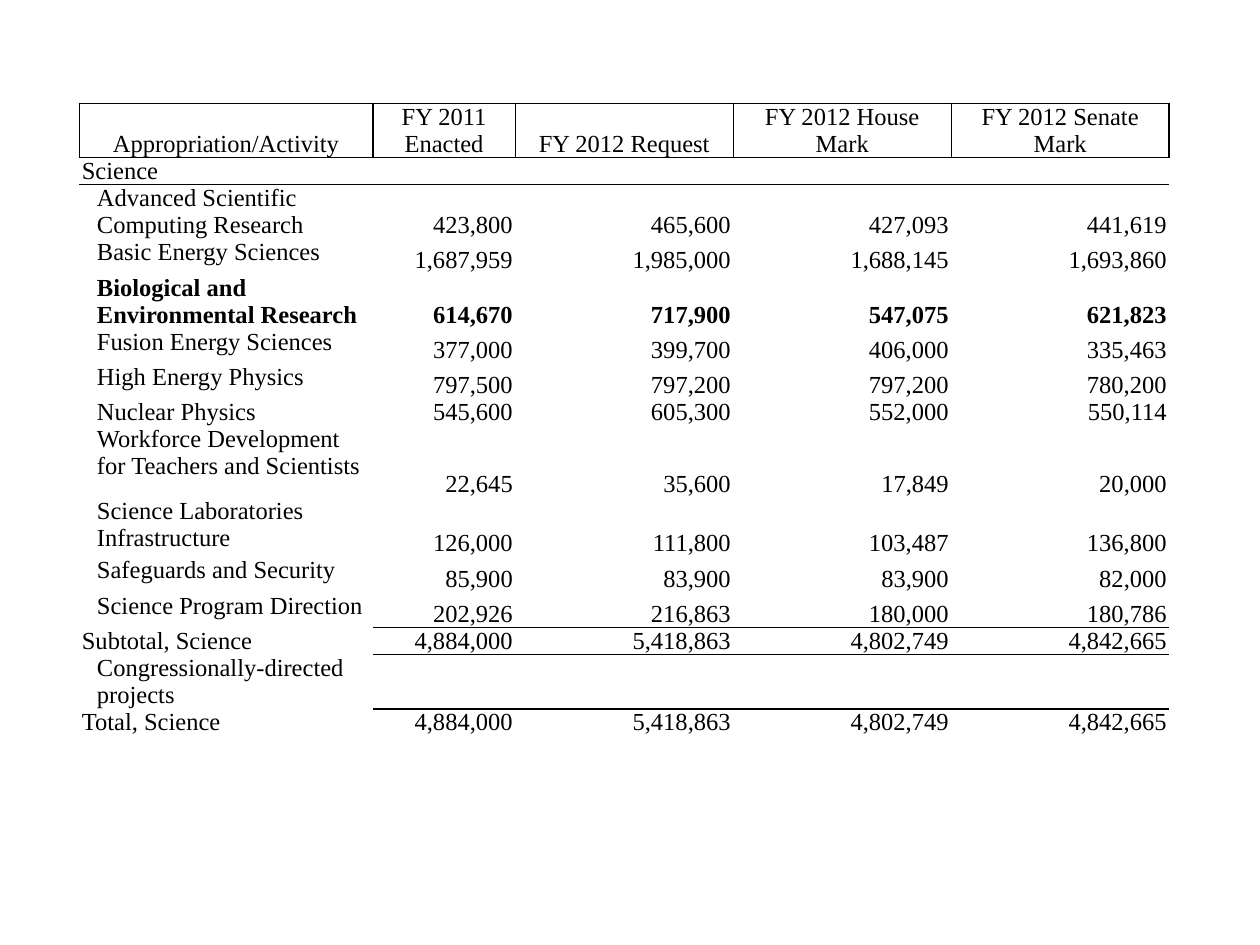
from lxml import etree
from pptx import Presentation
from pptx.dml.color import RGBColor
from pptx.enum.text import MSO_ANCHOR, PP_ALIGN
from pptx.oxml.ns import qn
from pptx.util import Inches, Pt

LEFT, CENTER, RIGHT = PP_ALIGN.LEFT, PP_ALIGN.CENTER, PP_ALIGN.RIGHT
TOP, BOTTOM = MSO_ANCHOR.TOP, MSO_ANCHOR.BOTTOM
NO_STYLE = "{2D5ABB26-0587-4C30-8999-92F81FD0307C}"

COLUMNS = [2.33, 1.13, 1.73, 1.73, 1.73]
HEADER = ["Appropriation/Activity", "FY 2011 Enacted", "FY 2012 Request",
          "FY 2012 House Mark", "FY 2012 Senate Mark"]
BUDGET = [
    (0.09, "Science", ""),
    (0.38, "Advanced Scientific Computing Research", "423,800 465,600 427,093 441,619"),
    (0.28, "Basic Energy Sciences", "1,687,959 1,985,000 1,688,145 1,693,860"),
    (0.38, "Biological and Environmental Research", "614,670 717,900 547,075 621,823"),
    (0.28, "Fusion Energy Sciences", "377,000 399,700 406,000 335,463"),
    (0.28, "High Energy Physics", "797,500 797,200 797,200 780,200"),
    (0.19, "Nuclear Physics", "545,600 605,300 552,000 550,114"),
    (0.57, "Workforce Development for Teachers and Scientists", "22,645 35,600 17,849 20,000"),
    (0.47, "Science Laboratories Infrastructure", "126,000 111,800 103,487 136,800"),
    (0.28, "Safeguards and Security", "85,900 83,900 83,900 82,000"),
    (0.28, "Science Program Direction", "202,926 216,863 180,000 180,786"),
    (0.19, "Subtotal, Science", "4,884,000 5,418,863 4,802,749 4,842,665"),
    (0.38, "Congressionally-directed projects", ""),
    (0.19, "Total, Science", "4,884,000 5,418,863 4,802,749 4,842,665"),
]
HEADINGS = {"Science", "Subtotal, Science", "Total, Science"}
HIGHLIGHT = "Biological and Environmental Research"
RULED = {"Subtotal, Science", "Total, Science"}


def rgb(value):
    return RGBColor.from_string(value)


class Deck:
    font = "Times New Roman"
    size = 14
    ink = "000000"

    def __init__(self, prs):
        self.s = prs.slides.add_slide(prs.slide_layouts[6])

    def table(self, left, top, width, height, columns, rows):
        frame = self.s.shapes.add_table(len(rows), len(columns), Inches(left),
                                        Inches(top), Inches(width), Inches(height))
        table = frame.table
        table.first_row = table.horz_banding = False
        table._tbl.tblPr.find(qn("a:tableStyleId")).text = NO_STYLE
        for column, size in zip(table.columns, columns):
            column.width = Inches(size)
        for row, size in zip(table.rows, rows):
            row.height = Inches(size)
        frame.height = Inches(height)
        return table

    def cell(self, cell, text, align, anchor, space, indent=0, bold=False, borders=""):
        cell.margin_left = cell.margin_right = Inches(0.02)
        cell.margin_top = cell.margin_bottom = 0
        cell.vertical_anchor = anchor
        p = cell.text_frame.paragraphs[0]
        p.text = text
        p.alignment = align
        p.space_before = p.space_after = Pt(space)
        if indent:
            pPr = p._p.get_or_add_pPr()
            pPr.set("marL", str(Inches(indent)))
            pPr.set("indent", "0")
        for r in p.runs:
            r.font.name = self.font
            r.font.size = Pt(self.size)
            r.font.bold = bold
            r.font.color.rgb = rgb(self.ink)
        if not text:
            end = etree.SubElement(p._p, qn("a:endParaRPr"), sz=str(self.size * 100))
            etree.SubElement(end, qn("a:latin"), typeface=self.font)
        for side in borders:
            self.border(cell, side)
        cell.fill.background()

    def border(self, cell, side):
        line = etree.SubElement(cell._tc.get_or_add_tcPr(), qn("a:ln" + side), w=str(Pt(1)))
        fill = etree.SubElement(line, qn("a:solidFill"))
        etree.SubElement(fill, qn("a:srgbClr"), val=self.ink)


def main():
    prs = Presentation()
    prs.slide_width, prs.slide_height = Inches(10), Inches(7.5)
    deck = Deck(prs)
    heights = [0.19] + [height for height, _, _ in BUDGET]
    table = deck.table(0.63, 0.82, 8.67, 5.26, COLUMNS, heights)

    for col, text in enumerate(HEADER):
        deck.cell(table.cell(0, col), text, CENTER, BOTTOM, 6, borders="LRTB")

    following = [name for _, name, _ in BUDGET[1:]] + [""]
    for row, ((_, name, amounts), below) in enumerate(zip(BUDGET, following), 1):
        bold = name == HIGHLIGHT
        deck.cell(table.cell(row, 0), name, LEFT, TOP, 3, bold=bold,
                  indent=0 if name in HEADINGS else 0.12,
                  borders="T" if row == 1 else "")
        borders = "T" if row == 1 or name in RULED else ""
        borders += "B" if below in RULED else ""
        values = amounts.split() or [""] * (len(COLUMNS) - 1)
        for col, value in enumerate(values, 1):
            deck.cell(table.cell(row, col), value, RIGHT, BOTTOM, 6, bold=bold, borders=borders)

    prs.save("out.pptx")


if __name__ == "__main__":
    main()
